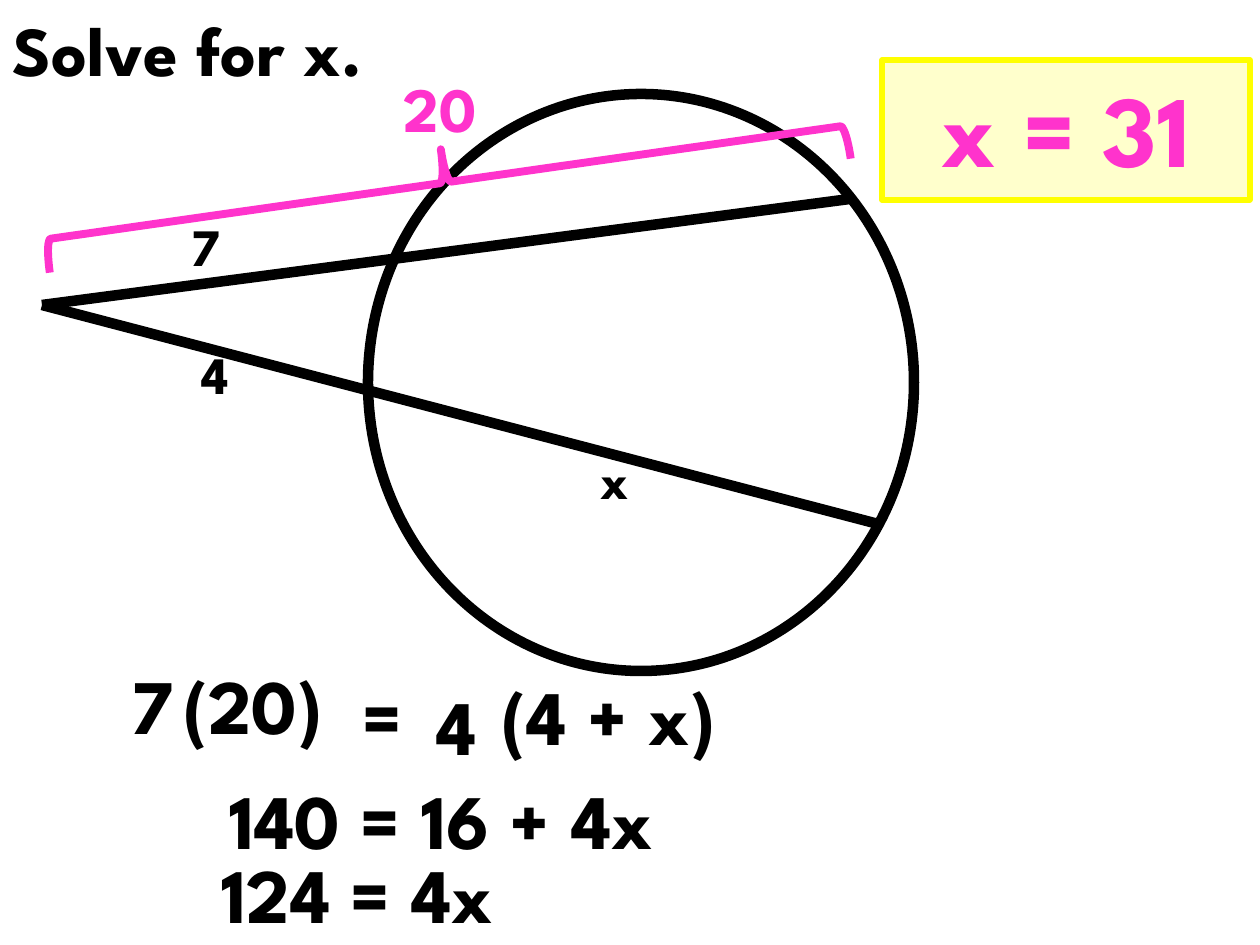
import lxml.etree
import pptx
import pptx.dml.color
import pptx.enum.shapes
import pptx.enum.text
import pptx.oxml.ns
import pptx.util

PX = 914400 / 126
THEME = {
    "font": "League Spartan",
    "ink": pptx.dml.color.RGBColor.from_string("000000"),
    "accent": pptx.dml.color.RGBColor.from_string("FF33CC"),
    "answer_fill": pptx.dml.color.RGBColor.from_string("FFFFCC"),
    "answer_line": pptx.dml.color.RGBColor.from_string("FFFF00"),
    "label": 30,
    "whole": 36,
    "title": 40,
    "equation": 44,
    "answer": 58,
}
LEFT = pptx.enum.text.PP_ALIGN.LEFT
CENTER = pptx.enum.text.PP_ALIGN.CENTER
TOP = pptx.enum.text.MSO_ANCHOR.TOP
BOTTOM = pptx.enum.text.MSO_ANCHOR.BOTTOM
SHAPES = pptx.enum.shapes.MSO_SHAPE


def emu(*lengths):
    return [pptx.util.Emu(round(length * PX)) for length in lengths]


def write(shape, text, size, color="ink", alignment=CENTER, anchor=TOP, space_before=50):
    """Fill a shape with one bold line; space_before is a percentage of the line."""
    frame = shape.text_frame
    frame_format = {
        "text": text,
        "word_wrap": True,
        "vertical_anchor": anchor,
        "auto_size": pptx.enum.text.MSO_AUTO_SIZE.SHAPE_TO_FIT_TEXT,
    }
    for name, value in frame_format.items():
        setattr(frame, name, value)
    paragraph = frame.paragraphs[0]
    paragraph.alignment = alignment
    properties = paragraph._p.get_or_add_pPr()
    spacing = lxml.etree.SubElement(properties, pptx.oxml.ns.qn("a:spcBef"))
    percent = lxml.etree.SubElement(spacing, pptx.oxml.ns.qn("a:spcPct"))
    percent.set("val", str(space_before * 1000))
    font = paragraph.runs[0].font
    font_format = {"name": THEME["font"], "size": pptx.util.Pt(THEME[size]), "bold": True}
    for name, value in font_format.items():
        setattr(font, name, value)
    font.color.rgb = THEME[color]


presentation = pptx.Presentation()
presentation.slide_width, presentation.slide_height = emu(1260, 945)
slide = presentation.slides.add_slide(presentation.slide_layouts[5])

# Title
title = slide.shapes.title
title.left, title.top, title.width, title.height = emu(0, 0, 1029, 97)
write(title, "Solve for x.", "title", alignment=LEFT, anchor=BOTTOM, space_before=0)

# Two secants from one outside point
outside_point = (42, 305)
for far_point in [(850, 199), (882, 525)]:
    secant = slide.shapes.add_connector(
        pptx.enum.shapes.MSO_CONNECTOR.STRAIGHT, *emu(*outside_point, *far_point)
    )
    secant.line.color.rgb = THEME["ink"]
    secant.line.width = pptx.util.Pt(6)
    lxml.etree.SubElement(secant._element.spPr, pptx.oxml.ns.qn("a:effectLst"))

# Circle, brace over the whole secant, and answer box
circle = slide.shapes.add_shape(SHAPES.OVAL, *emu(368, 94, 546, 577))
brace = slide.shapes.add_shape(SHAPES.LEFT_BRACE, *emu(412, -222, 67, 809))
brace.rotation = 81.9
answer_box = slide.shapes.add_shape(SHAPES.RECTANGLE, *emu(882, 60, 368, 140))
outlines = [(circle, "ink", 6), (brace, "accent", 4.5), (answer_box, "answer_line", 3)]
for shape, color, width in outlines:
    shape.shadow.inherit = False
    shape.fill.background()
    shape.line.color.rgb = THEME[color]
    shape.line.width = pptx.util.Pt(width)
answer_box.fill.solid()
answer_box.fill.fore_color.rgb = THEME["answer_fill"]
write(answer_box, "x = 31", "answer", "accent")

# Segment lengths
segments = [
    ("7", (179, 208, 126, 76), "label", "ink"),
    ("20", (391, 63, 126, 89), "whole", "accent"),
    ("4", (189, 336, 126, 76), "label", "ink"),
    ("x", (588, 441, 126, 76), "label", "ink"),
]
for text, box, size, color in segments:
    write(slide.shapes.add_textbox(*emu(*box)), text, size, color, LEFT)

# Worked equations
equations = [
    ("7", 116, 651, 73),
    ("(20)", 122, 651, 262),
    ("=", 346, 662, 73),
    ("4", 420, 672, 73),
    ("(4 + x)", 451, 662, 315),
    ("140 = 16 + 4x", 179, 766, 525),
    ("124 = 4x", 158, 840, 399),
]
for text, left, top, width in equations:
    write(slide.shapes.add_textbox(*emu(left, top, width, 105)), text, "equation")

presentation.save("out.pptx")
